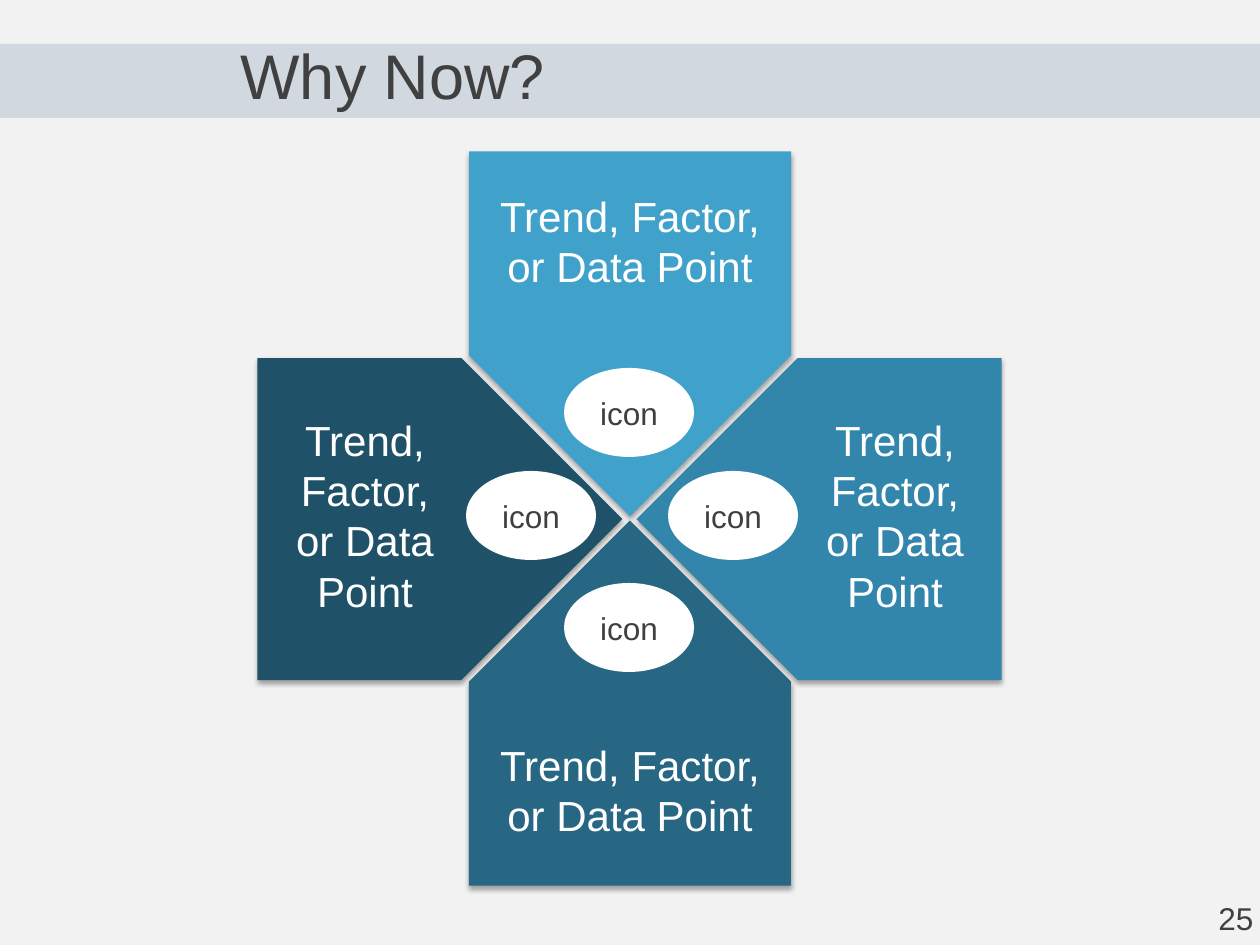
from dataclasses import dataclass
from lxml.etree import SubElement
from pptx import Presentation
from pptx.dml.color import RGBColor
from pptx.enum.shapes import MSO_SHAPE
from pptx.enum.text import MSO_ANCHOR, MSO_AUTO_SIZE, PP_ALIGN
from pptx.oxml.ns import qn
from pptx.util import Pt

SCALE = 914400 / 126


@dataclass(frozen=True)
class Theme:
    """Colours, font and type sizes of the slide."""
    font: str = "Arial"
    back: str = "F2F2F2"
    band: str = "1F497D"
    ink: str = "404040"
    white: str = "FFFFFF"
    top: str = "40A2CB"
    right: str = "3386AB"
    bottom: str = "286783"
    left: str = "1F5268"
    head: int = 36
    body: int = 24
    small: int = 18


THEME = Theme()


def px(*sizes):
    """Turn pixel lengths into EMU."""
    return [round(size * SCALE) for size in sizes]


def write(shape, text, size=THEME.body, color=THEME.ink, align=PP_ALIGN.LEFT,
          anchor=MSO_ANCHOR.TOP, wrap=True, fit=MSO_AUTO_SIZE.NONE, line=None):
    """Put formatted text into a shape."""
    frame = shape.text_frame
    frame.text = text
    frame.word_wrap, frame.auto_size = wrap, fit
    frame.vertical_anchor = anchor
    para = frame.paragraphs[0]
    para.alignment, para.line_spacing = align, line
    font = para.runs[0].font
    font.name, font.size = THEME.font, Pt(size)
    font.color.rgb = RGBColor.from_string(color)


def draw(slide, kind, box, color):
    """Add a plain filled preset shape."""
    shape = slide.shapes.add_shape(kind, *px(*box))
    shape.shadow.inherit = False
    shape.fill.solid()
    shape.fill.fore_color.rgb = RGBColor.from_string(color)
    shape.line.fill.background()
    return shape


def fade(color, share):
    """Give a colour element an opacity in percent."""
    SubElement(color, qn("a:alpha"), val=str(share * 1000))


def shade(shape):
    """Add a soft shadow below a shape."""
    effects = shape._element.spPr.find(qn("a:effectLst"))
    outer = SubElement(effects, qn("a:outerShdw"), blurRad=str(Pt(3.1)),
                       dist=str(Pt(1.8)), dir="5400000", rotWithShape="0")
    fade(SubElement(outer, qn("a:srgbClr"), val="000000"), 35)


def band(slide):
    """Draw the pale band behind the title."""
    shape = draw(slide, MSO_SHAPE.RECTANGLE, (0, 44, 1260, 74), THEME.band)
    fade(shape._element.spPr.find(f".//{qn('a:srgbClr')}"), 15)
    slide.shapes._spTree.insert(2, shape._element)


def title(slide, text):
    """Place and format the title."""
    shape = slide.shapes.title
    shape.left, shape.top, shape.width, shape.height = px(228, 44, 844, 74)
    write(shape, text, size=THEME.head, anchor=MSO_ANCHOR.BOTTOM, line=0.8)


def arrow(slide, mid, turn, color):
    """Draw a pentagon around its middle, turned by degrees."""
    wide, high = 365, 322
    box = (mid[0] - wide / 2, mid[1] - high / 2, wide, high)
    shape = draw(slide, MSO_SHAPE.PENTAGON, box, color)
    shape.rotation = turn
    shade(shape)


def label(slide, box, text, **form):
    """Add a text box."""
    shape = slide.shapes.add_textbox(*px(*box))
    write(shape, text, fit=MSO_AUTO_SIZE.SHAPE_TO_FIT_TEXT, **form)


def icon(slide, spot):
    """Draw an oval that holds the place of an icon."""
    shape = draw(slide, MSO_SHAPE.OVAL, (*spot, 130, 89), THEME.white)
    write(shape, "icon", size=THEME.small, align=PP_ALIGN.CENTER,
          anchor=MSO_ANCHOR.MIDDLE)


def main():
    """Build and save the slide."""
    deck = Presentation()
    deck.slide_width, deck.slide_height = px(1260, 945)
    slide = deck.slides.add_slide(deck.slide_layouts[5])
    slide.background.fill.solid()
    slide.background.fill.fore_color.rgb = RGBColor.from_string(THEME.back)
    band(slide)
    title(slide, "Why Now?")
    parts = [
        ((630, 334), 90, THEME.top, (469, 184, 322, 115), (564, 368)),
        ((630, 703), 270, THEME.bottom, (469, 733, 322, 115), (564, 583)),
        ((440, 519), 0, THEME.left, (279, 408, 172, 217), (466, 471)),
        ((819, 519), 180, THEME.right, (809, 408, 172, 217), (668, 471)),
    ]
    for mid, turn, color, _, _ in parts:
        arrow(slide, mid, turn, color)
    for _, _, _, box, spot in parts:
        label(slide, box, "Trend, Factor, or Data Point",
              color=THEME.white, align=PP_ALIGN.CENTER)
        icon(slide, spot)
    label(slide, (1206, 893, 60, 50), "25", size=THEME.small, wrap=False)
    deck.save("out.pptx")


if __name__ == "__main__":
    main()
